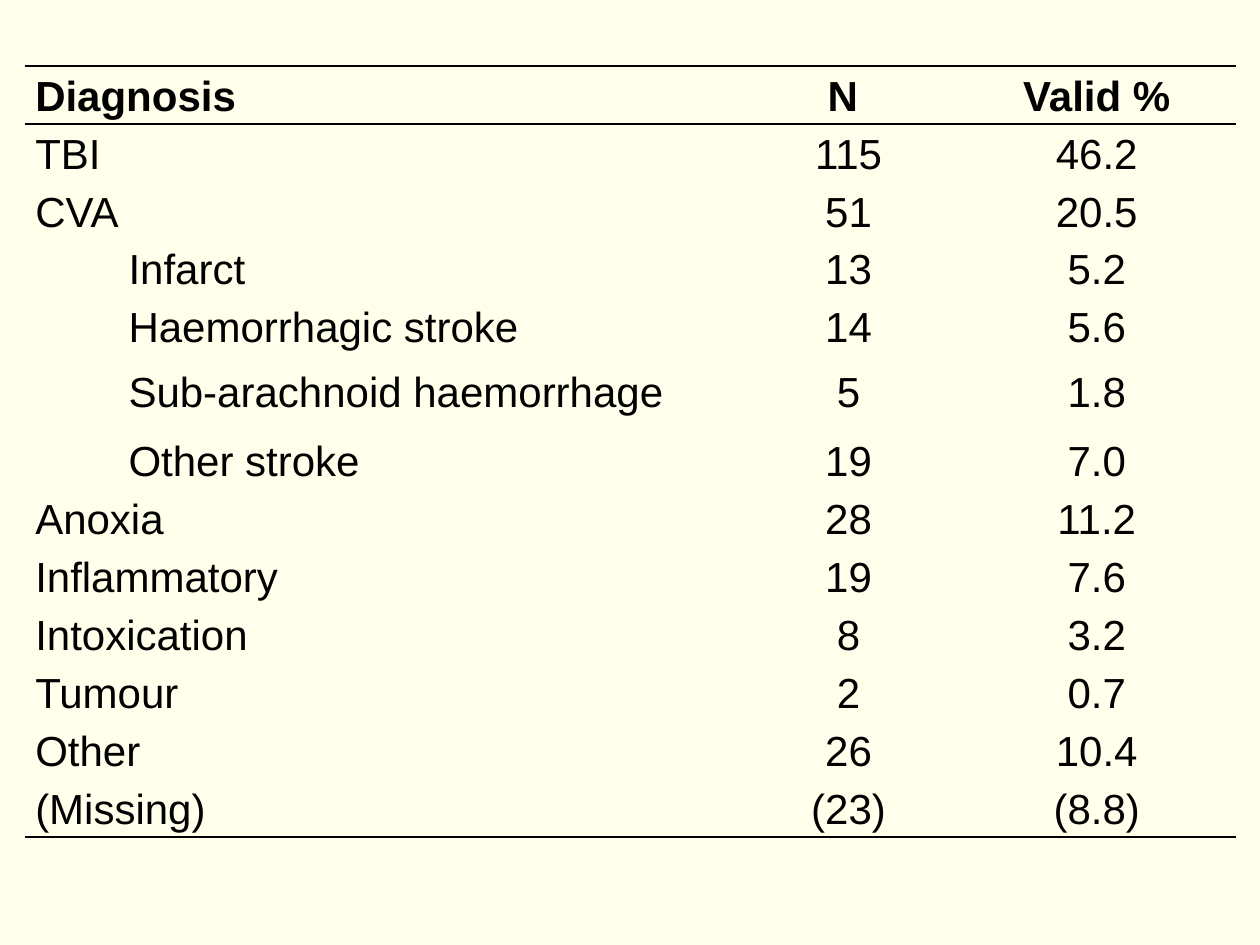
from lxml.etree import SubElement
from pptx import Presentation
from pptx.dml.color import RGBColor
from pptx.enum.text import MSO_ANCHOR as Anchor, PP_ALIGN as Align
from pptx.oxml.ns import qn
from pptx.util import Inches, Pt

CREAM = RGBColor(0xFF, 0xFF, 0xEB)
BLACK = RGBColor(0, 0, 0)

LEFT, TOP = 0.02, 0.07  # shares of the slide's size
COLUMN_SHARES = (0.567, 0.173, 0.221)
ROW_HEIGHT = 0.46
TALL_ROWS = {"Haemorrhagic stroke": 0.51, "Sub-arachnoid haemorrhage": 0.55}
STROKE_TYPES = ("Infarct", "Haemorrhagic stroke",
                "Sub-arachnoid haemorrhage", "Other stroke")
DIAGNOSES = [
    ("Diagnosis", "N ", "Valid %"),
    ("TBI", "115", "46.2"),
    ("CVA", "51", "20.5"),
    ("Infarct", "13", "5.2"),
    ("Haemorrhagic stroke", "14", "5.6"),
    ("Sub-arachnoid haemorrhage", "5", "1.8"),
    ("Other stroke", "19", "7.0"),
    ("Anoxia", "28", "11.2"),
    ("Inflammatory", "19", "7.6"),
    ("Intoxication", "8", "3.2"),
    ("Tumour", "2", "0.7"),
    ("Other", "26", "10.4"),
    ("(Missing)", "(23)", "(8.8)"),
]


class TableSlide:
    font_name = "Arial"
    font_size = Pt(24)
    line_spacing = 1.15
    side_margin = Inches(0.08)
    indent = Inches(0.74)
    rule_width = Pt(1)

    def __init__(self, deck):
        self.width, self.height = deck.slide_width, deck.slide_height
        self.slide = deck.slides.add_slide(deck.slide_layouts[6])
        fill = self.slide.background.fill
        fill.solid()
        fill.fore_color.rgb = CREAM

    def table(self, records):
        heights = [Inches(TALL_ROWS.get(record[0], ROW_HEIGHT)) for record in records]
        widths = [int(self.width * share) for share in COLUMN_SHARES]
        frame = self.slide.shapes.add_table(
            len(records), len(widths), int(self.width * LEFT),
            int(self.height * TOP), sum(widths), sum(heights))
        table = frame.table
        table.first_row = table.horz_banding = False
        for column, width in zip(table.columns, widths):
            column.width = width
        last = len(records) - 1
        for number, (record, height) in enumerate(zip(records, heights)):
            table.rows[number].height = height
            ruled = {"T": number in (0, 1), "B": number in (0, last)}
            for position, text in enumerate(record):
                cell = table.cell(number, position)
                self.cell_text(cell, text, centred=position > 0, bold=number == 0)
                self.cell_borders(cell, ruled)
                cell.fill.background()

    def cell_text(self, cell, text, centred, bold):
        cell.margin_left = cell.margin_right = self.side_margin
        cell.margin_top = cell.margin_bottom = 0
        cell.vertical_anchor = Anchor.TOP
        para = cell.text_frame.paragraphs[0]
        para.text = text
        para.alignment = Align.CENTER if centred else Align.LEFT
        para.line_spacing = self.line_spacing
        if text in STROKE_TYPES:
            para._p.get_or_add_pPr().set("marL", str(self.indent))
        font = para.runs[0].font
        font.name, font.size, font.bold = self.font_name, self.font_size, bold
        font.color.rgb = BLACK

    def cell_borders(self, cell, ruled):
        """Draw the sides marked true in ruled and clear the others."""
        properties = cell._tc.get_or_add_tcPr()
        for side in "LRTB":
            line = SubElement(properties, qn(f"a:ln{side}"), w=str(self.rule_width))
            if ruled.get(side):
                paint = SubElement(line, qn("a:solidFill"))
                SubElement(paint, qn("a:srgbClr"), val=str(BLACK))
            else:
                SubElement(line, qn("a:noFill"))


def main():
    deck = Presentation()
    deck.slide_width, deck.slide_height = Inches(10), Inches(7.5)
    TableSlide(deck).table(DIAGNOSES)
    deck.save("out.pptx")


if __name__ == "__main__":
    main()
